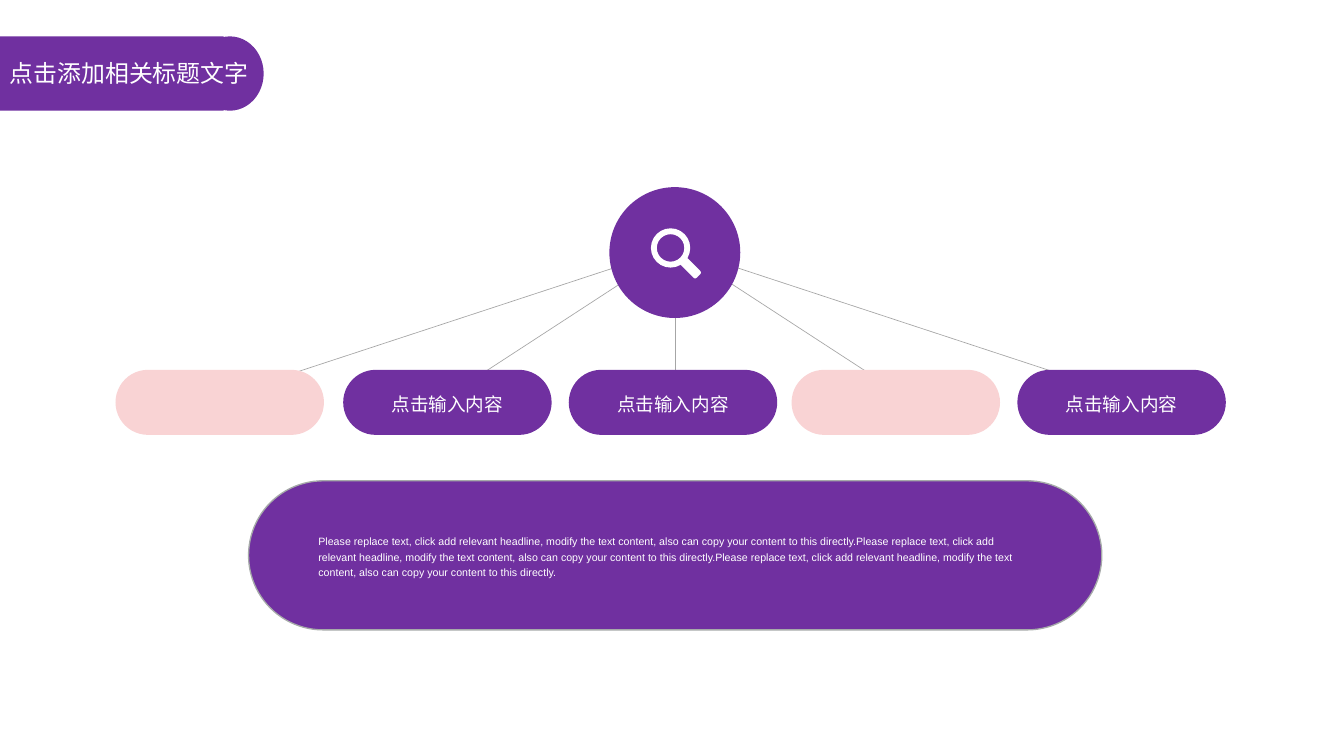
from dataclasses import dataclass

from lxml.etree import SubElement
from pptx import Presentation
from pptx.dml.color import RGBColor
from pptx.enum.shapes import MSO_CONNECTOR, MSO_SHAPE
from pptx.enum.text import MSO_ANCHOR, MSO_AUTO_SIZE, PP_ALIGN
from pptx.oxml.ns import qn
from pptx.util import Pt


@dataclass(frozen=True)
class Theme:
    """Colours, fonts and type sizes of the slide."""
    purple: str = "7030A0"
    pink: str = "F9D3D4"
    white: str = "FFFFFF"
    spoke: str = "A6A6A6"
    border: str = "A6AAA9"
    latin: str = "Arial"
    chinese: str = "Noto Sans CJK SC"
    title: int = 18
    label: int = 14
    body: int = 8


THEME = Theme()
HUB = (509, 186.5)
SPOKE_END = 299.5
PILL_TOP, PILL_WIDTH, PILL_HEIGHT = 278.6, 157, 49
LABEL = "点击输入内容"
PILLS = [
    (87, 165, THEME.pink, None),
    (258.5, 335.5, THEME.purple, LABEL),
    (428.4, 509, THEME.purple, LABEL),
    (596.2, 682.6, THEME.pink, None),
    (766.3, 852.5, THEME.purple, LABEL),
]
TITLE = "点击添加相关标题文字"
SENTENCE = ("Please replace text, click add relevant headline, modify the text "
            "content, also can copy your content to this directly.")


def add_block(page, kind, box, fill, border=None):
    """Add a flat preset shape in a left, top, width, height box."""
    shape = page.shapes.add_shape(kind, *map(Pt, box))
    shape.shadow.inherit = False
    shape.fill.solid()
    shape.fill.fore_color.rgb = RGBColor.from_string(fill)
    if border:
        shape.line.color.rgb = RGBColor.from_string(border)
        shape.line.width = Pt(1)
    else:
        shape.line.fill.background()
    return shape


def add_capsule(page, box, fill, border=None):
    """Add a rectangle with fully rounded ends."""
    capsule = add_block(page, MSO_SHAPE.ROUNDED_RECTANGLE, box, fill, border)
    capsule.adjustments[0] = 0.5
    return capsule


def add_spoke(page, end_x):
    """Draw a thin line from the hub down to a pill."""
    spoke = page.shapes.add_connector(
        MSO_CONNECTOR.STRAIGHT, *map(Pt, (*HUB, end_x, SPOKE_END)))
    spoke.line.color.rgb = RGBColor.from_string(THEME.spoke)
    spoke.line.width = Pt(0.5)
    SubElement(spoke.element.spPr, qn("a:effectLst"))


def write(shape, text, size, font, align, side=0):
    """Write one white paragraph into a shape and return it."""
    frame = shape.text_frame
    frame.word_wrap = True
    frame.auto_size = MSO_AUTO_SIZE.NONE
    frame.vertical_anchor = MSO_ANCHOR.MIDDLE
    frame.margin_left = frame.margin_right = Pt(side)
    frame.margin_top = frame.margin_bottom = Pt(0)
    para = frame.paragraphs[0]
    para.alignment = align
    span = para.add_run()
    span.text = text
    span.font.name = font
    span.font.size = Pt(size)
    span.font.color.rgb = RGBColor.from_string(THEME.white)
    SubElement(span.font._element, qn("a:ea"), typeface=THEME.chinese)
    return para


def space(para):
    """Apply the looser spacing of labels and body text."""
    para.line_spacing = 1.2
    para.space_before = Pt(10)


def place(placeholder, box):
    """Move a placeholder to a box and bring it to the front."""
    placeholder.left, placeholder.top, placeholder.width, placeholder.height = map(Pt, box)
    placeholder.element.getparent().append(placeholder.element)


def add_title(page):
    """Add the title on its tab at the left edge."""
    add_block(page, MSO_SHAPE.RECTANGLE, (0, 27.4, 168.5, 56), THEME.purple)
    add_block(page, MSO_SHAPE.OVAL, (147.6, 27.4, 51, 56), THEME.purple)
    title = page.shapes.title
    place(title, (0, 40.3, 198.7, 28.8))
    write(title, TITLE, THEME.title, THEME.chinese, PP_ALIGN.LEFT, 7.2)


def add_pills(page):
    """Add the spokes and the row of pills they reach."""
    for _, end_x, _, _ in PILLS:
        add_spoke(page, end_x)
    for left, _, fill, label in PILLS:
        pill = add_capsule(page, (left, PILL_TOP, PILL_WIDTH, PILL_HEIGHT), fill)
        if label:
            space(write(pill, label, THEME.label, THEME.latin, PP_ALIGN.CENTER))


def add_body(page):
    """Add the description on its wide panel."""
    add_capsule(page, (187.2, 362.2, 642.7, 112.3), THEME.purple, THEME.border)
    body = page.placeholders[1]
    place(body, (239.8, 387.2, 531.4, 62.6))
    para = write(body, SENTENCE * 3, THEME.body, THEME.latin, PP_ALIGN.LEFT)
    space(para)
    props = para._p.get_or_add_pPr()
    props.set("marL", "0")
    props.set("indent", "0")
    SubElement(props, qn("a:buNone"))


def add_hub(page):
    """Add the central disc with its magnifier."""
    add_block(page, MSO_SHAPE.OVAL, (459, 141, 98.6, 98.6), THEME.purple)
    lens = add_block(page, MSO_SHAPE.DONUT, (490.3, 172, 29.6, 29.6), THEME.white)
    lens.adjustments[0] = 0.15
    handle = add_block(page, MSO_SHAPE.ROUNDED_RECTANGLE,
                       (511.6, 198.3, 17, 7.2), THEME.white)
    handle.adjustments[0] = 0.25
    handle.rotation = 45


def main():
    """Build the hub and pills slide."""
    deck = Presentation()
    deck.slide_width, deck.slide_height = Pt(1012.32), Pt(569.52)
    page = deck.slides.add_slide(deck.slide_layouts[1])
    add_title(page)
    add_pills(page)
    add_body(page)
    add_hub(page)
    deck.save("out.pptx")


if __name__ == "__main__":
    main()
